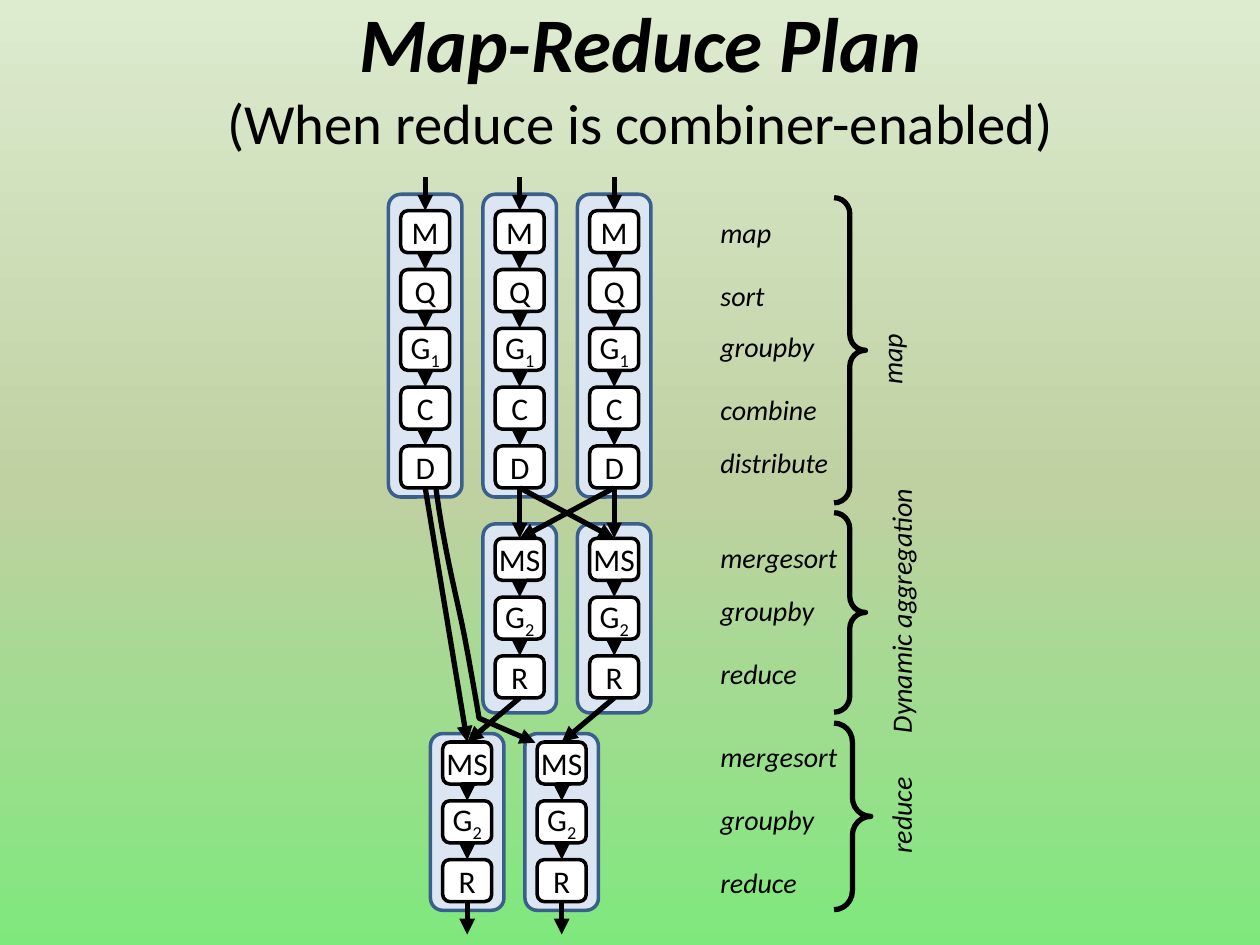
"""Build the Map-Reduce plan slide: stage columns, their links, step labels and phase braces."""
from dataclasses import dataclass

from lxml import etree
from pptx import Presentation
from pptx.dml.color import RGBColor
from pptx.enum.shapes import MSO_CONNECTOR, MSO_SHAPE
from pptx.enum.text import MSO_ANCHOR, MSO_AUTO_SIZE, PP_ALIGN
from pptx.oxml.ns import qn
from pptx.util import Pt

ROUND, BRACE = MSO_SHAPE.ROUNDED_RECTANGLE, MSO_SHAPE.RIGHT_BRACE
STRAIGHT = MSO_CONNECTOR.STRAIGHT
MIDDLE, CENTER = MSO_ANCHOR.MIDDLE, PP_ALIGN.CENTER
FIT = MSO_AUTO_SIZE.SHAPE_TO_FIT_TEXT
TOP, BOTTOM = 0, 2

COLORS = {"ink": "000000", "box": "FFFFFF", "panel": "DCE6F2", "edge": "3A5F8C"}
BACKGROUND = [(0, "DDEBCF"), (52, "BFD1A1"), (100, "7FE87D")]
FONT = "Calibri"
BOX_W, BOX_H, PITCH, PANEL_W = 28, 24, 33.6, 42
LABEL_X, LABEL_H, BRACE_X = 404.6, 26.6, 476.6
LABEL_WIDTHS = {"map": 44, "sort": 40, "groupby": 69, "combine": 70, "distribute": 77,
                "mergesort": 82, "reduce": 59, "Dynamic aggregation": 155.5}


@dataclass
class Phase:
    """One horizontal band of identical columns with its labels and brace."""
    name: str
    centers: list[float]
    panel_top: float
    panel_h: float
    box_top: float
    steps: list[str]
    labels: list[tuple[str, float]]
    brace: tuple[float, float, float]
    name_center: tuple[float, float]


REDUCE_STEPS = ["MS", "G2", "R"]
PHASES = [
    Phase("map", [243, 297, 351], 111, 173, 120.4, ["M", "Q", "G1", "C", "D"],
          [("map", 119.6), ("sort", 155.6), ("groupby", 185), ("combine", 221), ("distribute", 251)],
          (113, 174.4, 18), (509.5, 204.8)),
    Phase("Dynamic aggregation", [297, 351], 299.4, 108, 307.6, REDUCE_STEPS,
          [("mergesort", 305.4), ("groupby", 335.4), ("reduce", 371.4)],
          (293, 114, 18), (514.8, 348.2)),
    Phase("reduce", [267, 321], 419.2, 101, 424, REDUCE_STEPS,
          [("mergesort", 419), ("groupby", 455), ("reduce", 491)],
          (413.2, 106.6, 21), (514.8, 465.4)),
]


def rgb(name: str) -> RGBColor:
    """Return a named colour."""
    return RGBColor.from_string(COLORS[name])


def set_background(s) -> None:
    """Fill the slide with a downward three-stop gradient."""
    s.background.fill.gradient()
    grad = s.background._cSld.find(".//" + qn("a:gradFill"))
    stops = grad.find(qn("a:gsLst"))
    for gs in list(stops):
        stops.remove(gs)
    for position, value in BACKGROUND:
        gs = etree.SubElement(stops, qn("a:gs"), pos=str(position * 1000))
        etree.SubElement(gs, qn("a:srgbClr"), val=value)
    grad.find(qn("a:lin")).set("ang", "5400000")


def style_run(r, size: float, bold: bool = False, italic: bool = False) -> None:
    """Apply the slide font to a run."""
    r.font.name, r.font.size = FONT, Pt(size)
    r.font.bold, r.font.italic = bold, italic
    r.font.color.rgb = rgb("ink")


def set_line(sp, color: str, width: float, arrow: bool = False) -> None:
    """Set the outline and an optional arrowhead at its end."""
    sp.line.color.rgb = rgb(color)
    sp.line.width = Pt(width)
    if arrow:
        etree.SubElement(sp.line._get_or_add_ln(), qn("a:tailEnd"), type="triangle")


def add_block(s, x: float, y: float, w: float, h: float, fill: str, edge: str):
    """Add a rounded rectangle."""
    sp = s.shapes.add_shape(ROUND, Pt(x), Pt(y), Pt(w), Pt(h))
    sp.shadow.inherit = False
    sp.fill.solid()
    sp.fill.fore_color.rgb = rgb(fill)
    set_line(sp, edge, 2)
    return sp


def add_step(s, center: float, y: float, step: str):
    """Add a step box, setting a trailing digit as a subscript."""
    sp = add_block(s, center - BOX_W / 2, y, BOX_W, BOX_H, "box", "ink")
    tf = sp.text_frame
    tf.word_wrap, tf.vertical_anchor = False, MIDDLE
    tf.margin_left = tf.margin_right = tf.margin_top = tf.margin_bottom = 0
    p = tf.paragraphs[0]
    p.alignment = CENTER
    letters = step.rstrip("12")
    for text in filter(None, (letters, step[len(letters):])):
        r = p.add_run()
        r.text = text
        style_run(r, 18)
        if text.isdigit():
            r.font._element.set("baseline", "-25000")
    return sp


def add_arrow(s, x1: float, y1: float, x2: float, y2: float, start=None, end=None) -> None:
    """Add an arrow, joined to a box bottom at its start and a box top at its end."""
    cn = s.shapes.add_connector(STRAIGHT, Pt(x1), Pt(y1), Pt(x2), Pt(y2))
    if start is not None:
        cn.begin_connect(start, BOTTOM)
    if end is not None:
        cn.end_connect(end, TOP)
    set_line(cn, "ink", 3, arrow=True)
    etree.SubElement(cn._element.spPr, qn("a:effectLst"))


def link(s, start, end) -> None:
    """Join two step boxes."""
    add_arrow(s, 0, 0, 0, 0, start, end)


def add_column(s, phase: Phase, center: float) -> list:
    """Add a chain of step boxes and return them."""
    boxes = [add_step(s, center, phase.box_top + i * PITCH, step) for i, step in enumerate(phase.steps)]
    for upper, lower in zip(boxes, boxes[1:]):
        link(s, upper, lower)
    return boxes


def add_label(s, text: str, x: float, y: float, rotation: float = 0) -> None:
    """Add an italic label."""
    sp = s.shapes.add_textbox(Pt(x), Pt(y), Pt(LABEL_WIDTHS[text]), Pt(LABEL_H))
    sp.rotation = rotation
    tf = sp.text_frame
    tf.text = text
    tf.word_wrap, tf.auto_size = False, FIT
    style_run(tf.paragraphs[0].runs[0], 16, italic=True)


def add_legend(s, phase: Phase) -> None:
    """Add step labels, the brace and the upright phase name."""
    for text, y in phase.labels:
        add_label(s, text, LABEL_X, y)
    top, height, width = phase.brace
    sp = s.shapes.add_shape(BRACE, Pt(BRACE_X), Pt(top), Pt(width), Pt(height))
    sp.shadow.inherit = False
    sp.fill.background()
    sp.adjustments[0] = 0.51
    set_line(sp, "ink", 3)
    x, y = phase.name_center
    add_label(s, phase.name, x - LABEL_WIDTHS[phase.name] / 2, y - LABEL_H / 2, 270)


def bezier(a, b, c, d, steps: int = 10) -> list[tuple[float, float]]:
    """Return points along a cubic curve after its start."""
    ts = [i / steps for i in range(1, steps + 1)]
    return [tuple((1 - t) ** 3 * i + 3 * t * (1 - t) ** 2 * j + 3 * t * t * (1 - t) * k + t ** 3 * m
                  for i, j, k, m in zip(a, b, c, d)) for t in ts]


def add_bypass(s) -> None:
    """Add the bent arrow from the first map column to the second reducer."""
    start, bend, knee = (249.2, 279.4), (266.6, 369.6), (273.8, 410.4)
    points = bezier(start, (254.2, 317.5), (262.8, 347.8), bend)
    points += bezier(bend, (270.7, 391.7), knee, knee) + [(306, 424.4)]
    fb = s.shapes.build_freeform(Pt(start[0]), Pt(start[1]))
    fb.add_line_segments([(Pt(x), Pt(y)) for x, y in points], close=False)
    sp = fb.convert_to_shape()
    sp.shadow.inherit = False
    sp.fill.background()
    set_line(sp, "ink", 3, arrow=True)


def add_title(s) -> None:
    """Add the two-line title."""
    tf = s.shapes.add_textbox(Pt(42), Pt(18), Pt(648), Pt(50.4)).text_frame
    tf.word_wrap, tf.vertical_anchor = True, MIDDLE
    p = tf.paragraphs[0]
    p.text = "Map-Reduce Plan\v(When reduce is combiner-enabled)"
    p.alignment = CENTER
    style_run(p.runs[0], 44.1, bold=True, italic=True)
    style_run(p.runs[1], 32.4)


def main() -> None:
    """Build and save the slide."""
    prs = Presentation()
    prs.slide_width, prs.slide_height = Pt(720), Pt(540)
    s = prs.slides.add_slide(prs.slide_layouts[6])
    set_background(s)
    add_title(s)
    for phase in PHASES:
        for center in phase.centers:
            add_block(s, center - PANEL_W / 2, phase.panel_top, PANEL_W, phase.panel_h, "panel", "edge")
    mappers, mergers, reducers = [[add_column(s, phase, c) for c in phase.centers] for phase in PHASES]
    for center, column in zip(PHASES[0].centers, mappers):
        add_arrow(s, center, 101.4, center, 120.4, end=column[0])
    for center, column in zip(PHASES[2].centers, reducers):
        add_arrow(s, center, 515, center, 534, start=column[-1])
    for mapper in mappers[1:]:
        for merger in mergers:
            link(s, mapper[-1], merger[0])
    for merger, reducer in zip(mergers, reducers):
        link(s, merger[-1], reducer[0])
    link(s, mappers[0][-1], reducers[0][0])
    add_bypass(s)
    for phase in PHASES:
        add_legend(s, phase)
    prs.save("out.pptx")


if __name__ == "__main__":
    main()
